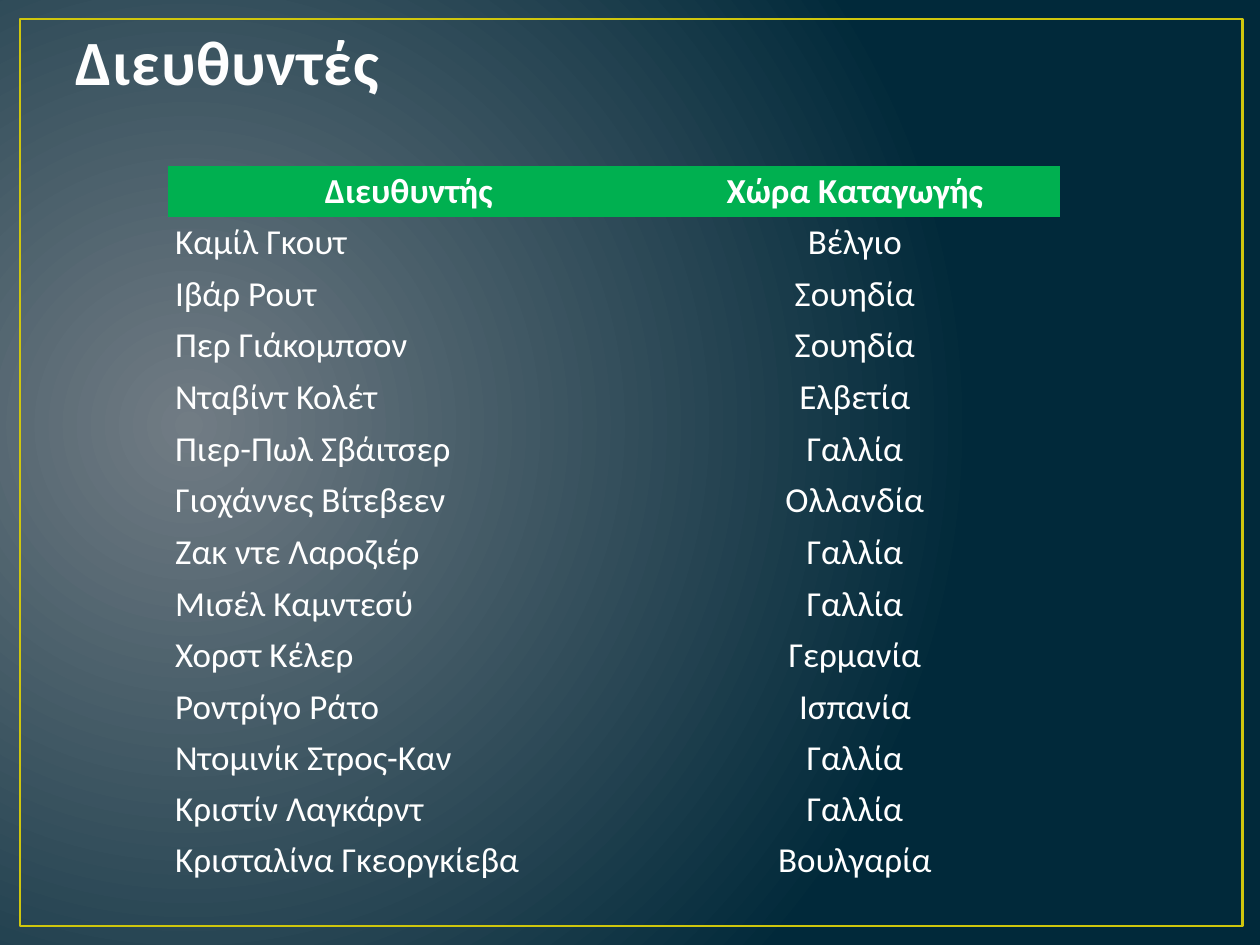
import pptx
import pptx.util
import pptx.dml.color
import pptx.enum.shapes
import pptx.enum.text
import pptx.oxml
import pptx.oxml.ns

WIDE, HIGH = 10, 7.5
FONT = "Calibri"
HUES = {"glow": "717C84", "night": "01293A", "frame": "CFC60D",
        "title": "FEFEFE", "edge": "384F55", "head": "00B050", "text": "FFFFFF"}
PLAIN = "{2D5ABB26-0587-4C30-8999-92F81FD0307C}"  # no style, no grid
COLS = [3.83, 3.25]
ROWS = [
    ("Διευθυντής", "Χώρα Καταγωγής"),
    ("Καμίλ Γκουτ", "Βέλγιο"),
    ("Ιβάρ Ρουτ", "Σουηδία"),
    ("Περ Γιάκομπσον", "Σουηδία"),
    ("Νταβίντ Κολέτ", "Ελβετία"),
    ("Πιερ-Πωλ Σβάιτσερ", "Γαλλία"),
    ("Γιοχάννες Βίτεβεεν", "Ολλανδία"),
    ("Ζακ ντε Λαροζιέρ", "Γαλλία"),
    ("Μισέλ Καμντεσύ", "Γαλλία"),
    ("Χορστ Κέλερ", "Γερμανία"),
    ("Ροντρίγο Ράτο", "Ισπανία"),
    ("Ντομινίκ Στρος-Καν", "Γαλλία"),
    ("Κριστίν Λαγκάρντ", "Γαλλία"),
    ("Κρισταλίνα Γκεοργκίεβα", "Βουλγαρία"),
]


def hue(name):
    return pptx.dml.color.RGBColor.from_string(HUES[name])


def inch(*sizes):
    return [pptx.util.Inches(size) for size in sizes]


def node(text):
    return pptx.oxml.parse_xml(text.replace(">", " " + pptx.oxml.ns.nsdecls("a") + ">", 1))


def add_run(para, text, size, color, bold):
    run = para.add_run()
    run.text = text
    font = run.font
    font.name, font.size, font.bold = FONT, pptx.util.Pt(size), bold
    font.color.rgb = hue(color)
    return run


def add_glow(slide):
    fill = slide.background.fill
    fill.gradient()
    for stop, name in zip(fill.gradient_stops, ("glow", "night")):
        stop.color.rgb = hue(name)
    # Turn the linear blend into a round one
    line = slide.background._cSld.find(".//" + pptx.oxml.ns.qn("a:lin"))
    line.getparent().replace(line, node(
        '<a:path path="circle"><a:fillToRect l="15000" t="50000" r="85000" b="60000"/></a:path>'))


def add_frame(slide):
    rect = pptx.enum.shapes.MSO_SHAPE.RECTANGLE
    frame = slide.shapes.add_shape(
        rect, *inch(0.016 * WIDE, 0.02 * HIGH, 0.97 * WIDE, 0.96 * HIGH))
    frame.shadow.inherit = False
    frame.fill.background()
    frame.line.color.rgb = hue("frame")
    frame.line.width = pptx.util.Pt(1.5)


def add_title(slide, text):
    box = slide.shapes.add_textbox(*inch(0.05 * WIDE, -0.42, 0.9 * WIDE, 1.25))
    frame = box.text_frame
    frame.word_wrap = True
    frame.vertical_anchor = pptx.enum.text.MSO_ANCHOR.BOTTOM
    run = add_run(frame.paragraphs[0], text, 36, "title", True)
    # Letter gap and thin outline
    props = run.font._element
    props.set("spc", "50")
    props.insert(0, node('<a:ln w="13335"><a:solidFill><a:srgbClr val="%s"/>'
                         '</a:solidFill></a:ln>' % HUES["edge"]))


def fill_cell(cell, text, head, mid):
    cell.margin_left = cell.margin_right = pptx.util.Inches(0.06)
    cell.margin_top = cell.margin_bottom = pptx.util.Inches(0.03)
    cell.vertical_anchor = pptx.enum.text.MSO_ANCHOR.MIDDLE
    if head:
        cell.fill.solid()
        cell.fill.fore_color.rgb = hue("head")
    else:
        cell.fill.background()
    para = cell.text_frame.paragraphs[0]
    align = pptx.enum.text.PP_ALIGN
    para.alignment = align.CENTER if mid else align.LEFT
    add_run(para, text, 20, "text", head)


def add_grid(slide):
    last = len(ROWS) - 2
    highs = [0.41 if 0 < row < last else 0.4 for row in range(len(ROWS))]
    shape = slide.shapes.add_table(
        len(ROWS), len(COLS), *inch(1.33, 1.32, sum(COLS), sum(highs)))
    table = shape.table
    table.first_row = table.horz_banding = False
    table._tbl.tblPr.find(pptx.oxml.ns.qn("a:tableStyleId")).text = PLAIN
    for col, width in zip(table.columns, inch(*COLS)):
        col.width = width
    for row, high in zip(table.rows, inch(*highs)):
        row.height = high
    for i, texts in enumerate(ROWS):
        for j, text in enumerate(texts):
            fill_cell(table.cell(i, j), text, i == 0, i == 0 or j == 1)


def main():
    deck = pptx.Presentation()
    deck.slide_width, deck.slide_height = inch(WIDE, HIGH)
    slide = deck.slides.add_slide(deck.slide_layouts[6])
    # Backdrop
    add_glow(slide)
    add_frame(slide)
    # Content
    add_title(slide, "Διευθυντές")
    add_grid(slide)
    deck.save("out.pptx")


if __name__ == "__main__":
    main()
